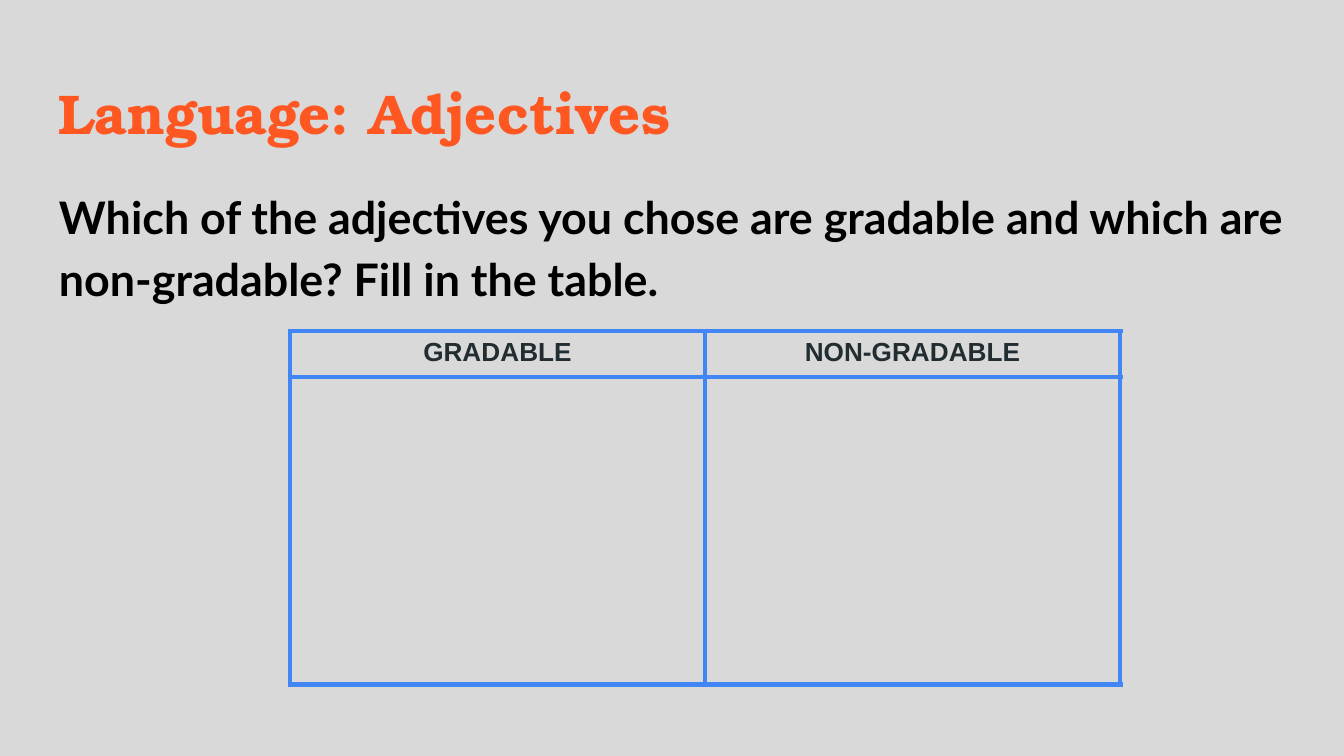
from dataclasses import dataclass

from lxml.etree import SubElement
from pptx import Presentation
from pptx.dml.color import RGBColor
from pptx.enum.text import MSO_ANCHOR, MSO_AUTO_SIZE, PP_ALIGN
from pptx.oxml.ns import qn
from pptx.util import Pt

TITLE = "Language: Adjectives"
QUESTION = ("Which of the adjectives you chose are gradable and which are "
            "non-gradable? Fill in the table.")
TABLE_ROWS = [("GRADABLE", "NON-GRADABLE"), ("", "")]


@dataclass(frozen=True)
class Theme:
    background: str = "D9D9D9"
    border: str = "4285F4"
    border_pt: int = 3
    # font, size, colour
    title: tuple = ("TeX Gyre Bonum", 30, "FF5722")
    body: tuple = ("Lato", 24, "000000")
    header: tuple = ("Arial", 14, "222D32")


THEME = Theme()
SCALE = 914400 / 134.4
SLIDE_W, SLIDE_H = 1344, 756
TITLE_BOX = (46, 66, 1253, 85)
BODY_BOX = (46, 169, 1253, 503)
TABLE_LEFT, TABLE_TOP, COL_W = 290, 331, 415
ROW_HEIGHTS = (46, 308)
INSET = 13


def px(n):
    return round(n * SCALE)


def style_paragraph(p, style, align):
    font, size, color = style
    p.alignment = align
    for r in p.runs:
        r.font.name = font
        r.font.size = Pt(size)
        r.font.bold = True
        r.font.color.rgb = RGBColor.from_string(color)


def fill_placeholder(s, box, text, style):
    s.left, s.top, s.width, s.height = map(px, box)
    tf = s.text_frame
    tf.text = text
    tf.word_wrap = True
    tf.auto_size = MSO_AUTO_SIZE.NONE
    tf.vertical_anchor = MSO_ANCHOR.TOP
    tf.margin_left = tf.margin_right = tf.margin_top = tf.margin_bottom = px(INSET)
    p = tf.paragraphs[0]
    p.space_before = Pt(0)
    style_paragraph(p, style, PP_ALIGN.LEFT)
    return p


def remove_bullet(p):
    pPr = p._p.get_or_add_pPr()
    pPr.set("marL", "0")
    pPr.set("indent", "0")
    SubElement(pPr, qn("a:buNone"))


def add_borders(cell):
    tcPr = cell._tc.get_or_add_tcPr()
    for i, side in enumerate(("lnL", "lnR", "lnT", "lnB")):
        ln = tcPr.makeelement(qn(f"a:{side}"), {"w": str(Pt(THEME.border_pt))})
        fill = SubElement(ln, qn("a:solidFill"))
        SubElement(fill, qn("a:srgbClr"), val=THEME.border)
        tcPr.insert(i, ln)  # borders come before the fill


def add_answer_table(slide):
    n_rows, n_cols = len(TABLE_ROWS), len(TABLE_ROWS[0])
    table = slide.shapes.add_table(
        n_rows, n_cols, px(TABLE_LEFT), px(TABLE_TOP),
        px(COL_W * n_cols), px(sum(ROW_HEIGHTS))).table
    table.first_row = table.horz_banding = False
    for col in table.columns:
        col.width = px(COL_W)
    for row, height, texts in zip(table.rows, ROW_HEIGHTS, TABLE_ROWS):
        row.height = px(height)
        for cell, text in zip(row.cells, texts):
            cell.text = text
            style_paragraph(cell.text_frame.paragraphs[0], THEME.header, PP_ALIGN.CENTER)
            cell.fill.background()
            add_borders(cell)


def main():
    prs = Presentation()
    prs.slide_width, prs.slide_height = px(SLIDE_W), px(SLIDE_H)
    slide = prs.slides.add_slide(prs.slide_layouts[1])
    slide.background.fill.solid()
    slide.background.fill.fore_color.rgb = RGBColor.from_string(THEME.background)

    fill_placeholder(slide.shapes.title, TITLE_BOX, TITLE, THEME.title)
    p = fill_placeholder(slide.placeholders[1], BODY_BOX, QUESTION, THEME.body)
    p.line_spacing = 1.15
    p.space_after = Pt(16)
    remove_bullet(p)
    add_answer_table(slide)
    prs.save("out.pptx")


if __name__ == "__main__":
    main()
